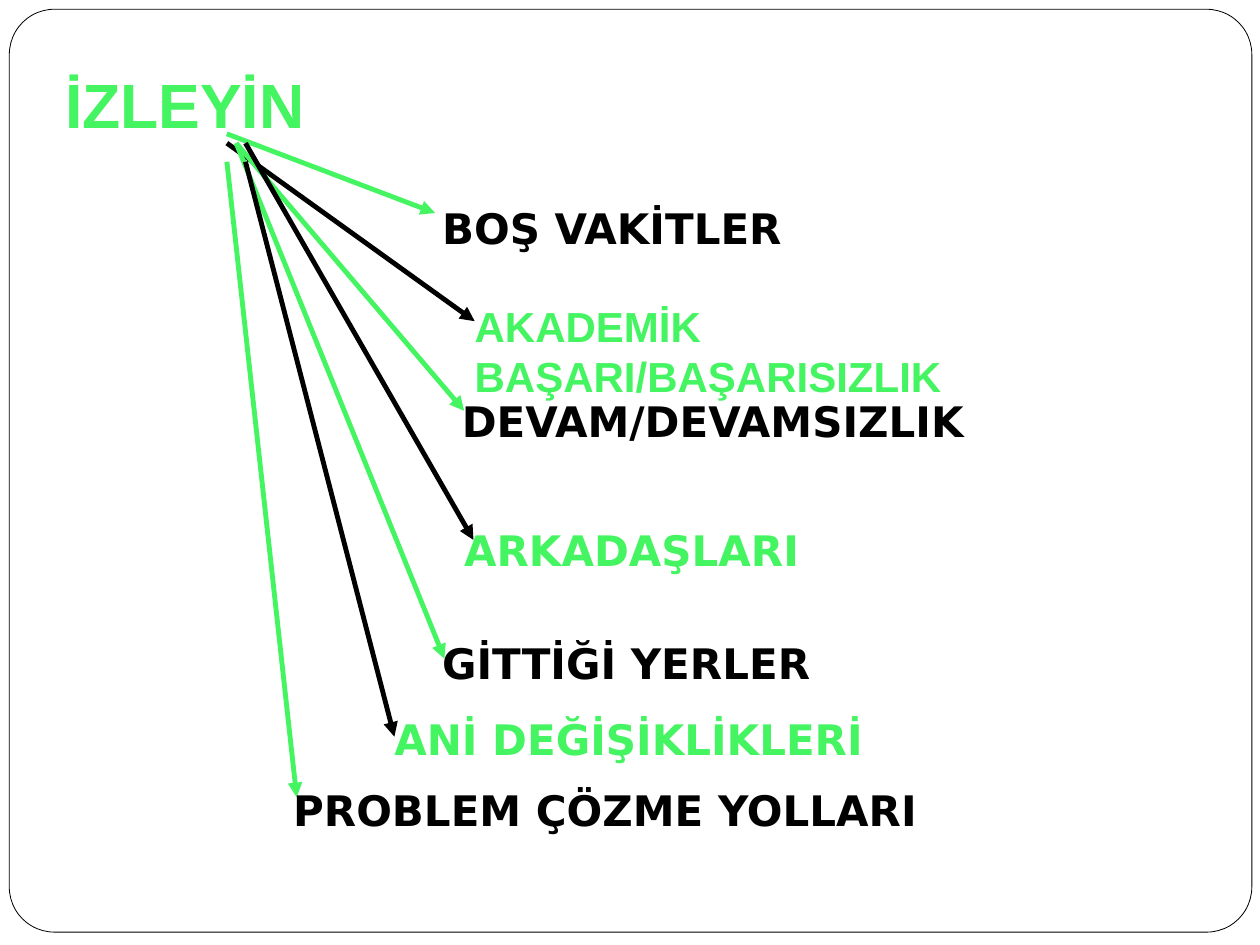
from lxml import etree
from pptx import Presentation
from pptx.dml.color import RGBColor
from pptx.enum import shapes, text
from pptx.oxml import ns
from pptx.util import Inches, Pt

GREEN, BLACK, WHITE = "44F461", "000000", "FFFFFF"
SANS, ARIAL = "DejaVu Sans", "Arial"

TITLE = "İZLEYİN"
# wording, left, top, width, font, colour, wraps
TOPICS = [
    ("BOŞ VAKİTLER", 3.69, 1.69, 3.22, SANS, BLACK, False),
    ("AKADEMİK BAŞARI/BAŞARISIZLIK", 3.97, 2.53, 6.2, ARIAL, GREEN, True),
    ("DEVAM/DEVAMSIZLIK", 3.86, 3.35, 4.76, SANS, BLACK, False),
    ("ARKADAŞLARI", 3.88, 4.46, 3.16, SANS, GREEN, False),
    ("GİTTİĞİ YERLER", 3.69, 5.43, 3.57, SANS, BLACK, False),
    ("ANİ DEĞİŞİKLİKLERİ", 3.28, 6.08, 4.56, SANS, GREEN, False),
    ("PROBLEM ÇÖZME YOLLARI", 2.41, 6.69, 5.61, SANS, BLACK, False),
]
# start and end of the arrow to each topic; colours alternate from green
ARROWS = [
    ((1.95, 1.15), (3.74, 1.83)),
    ((1.95, 1.23), (4.08, 2.76)),
    ((2.03, 1.23), (3.99, 3.53)),
    ((2.11, 1.23), (4.07, 4.64)),
    ((2.03, 1.23), (3.82, 5.66)),
    ((2.11, 1.39), (3.39, 6.33)),
    ((1.95, 1.39), (2.55, 6.85)),
]


def rgb(code):
    return RGBColor.from_string(code)


def add_frame(page):
    frame = page.shapes.add_shape(shapes.MSO_SHAPE.ROUNDED_RECTANGLE,
                                  *map(Inches, (0.08, 0.08, 10.68, 7.93)))
    frame.shadow.inherit = False
    frame.adjustments[0] = 0.049
    frame.fill.solid()
    frame.fill.fore_color.rgb = rgb(WHITE)
    frame.line.color.rgb = rgb(BLACK)
    frame.line.width = Pt(0.5)


def add_label(page, wording, left, top, width, height=0.54, *, font=SANS, color=BLACK,
              size=26, wrap=False, anchor=text.MSO_ANCHOR.TOP, bottom=0.05):
    box = page.shapes.add_textbox(*map(Inches, (left, top, width, height)))
    frame = box.text_frame
    frame.word_wrap = wrap
    frame.vertical_anchor = anchor
    frame.margin_left = frame.margin_right = Inches(0.11)
    frame.margin_top, frame.margin_bottom = Inches(0.05), Inches(bottom)
    span = frame.paragraphs[0].add_run()
    span.text = wording
    span.font.name, span.font.size, span.font.bold = font, Pt(size), True
    span.font.color.rgb = rgb(color)


def add_arrow(page, start, end, color):
    arrow = page.shapes.add_connector(shapes.MSO_CONNECTOR.STRAIGHT,
                                      *map(Inches, start + end))
    arrow.line.color.rgb = rgb(color)
    arrow.line.width = Pt(3)
    etree.SubElement(arrow.line._get_or_add_ln(), ns.qn("a:tailEnd"), type="triangle")
    etree.SubElement(arrow._element.spPr, ns.qn("a:effectLst"))


def main():
    deck = Presentation()
    deck.slide_width, deck.slide_height = Inches(10.83), Inches(8.12)
    page = deck.slides.add_slide(deck.slide_layouts[6])
    add_frame(page)
    add_label(page, TITLE, 0.45, 0.49, 2.6, 0.83, font=ARIAL, color=GREEN, size=38.7,
              wrap=True, anchor=text.MSO_ANCHOR.BOTTOM, bottom=0.11)
    for index, (start, end) in enumerate(ARROWS):
        add_arrow(page, start, end, (GREEN, BLACK)[index % 2])
    for wording, left, top, width, font, color, wrap in TOPICS:
        add_label(page, wording, left, top, width, font=font, color=color, wrap=wrap)
    deck.save("out.pptx")


if __name__ == "__main__":
    main()
